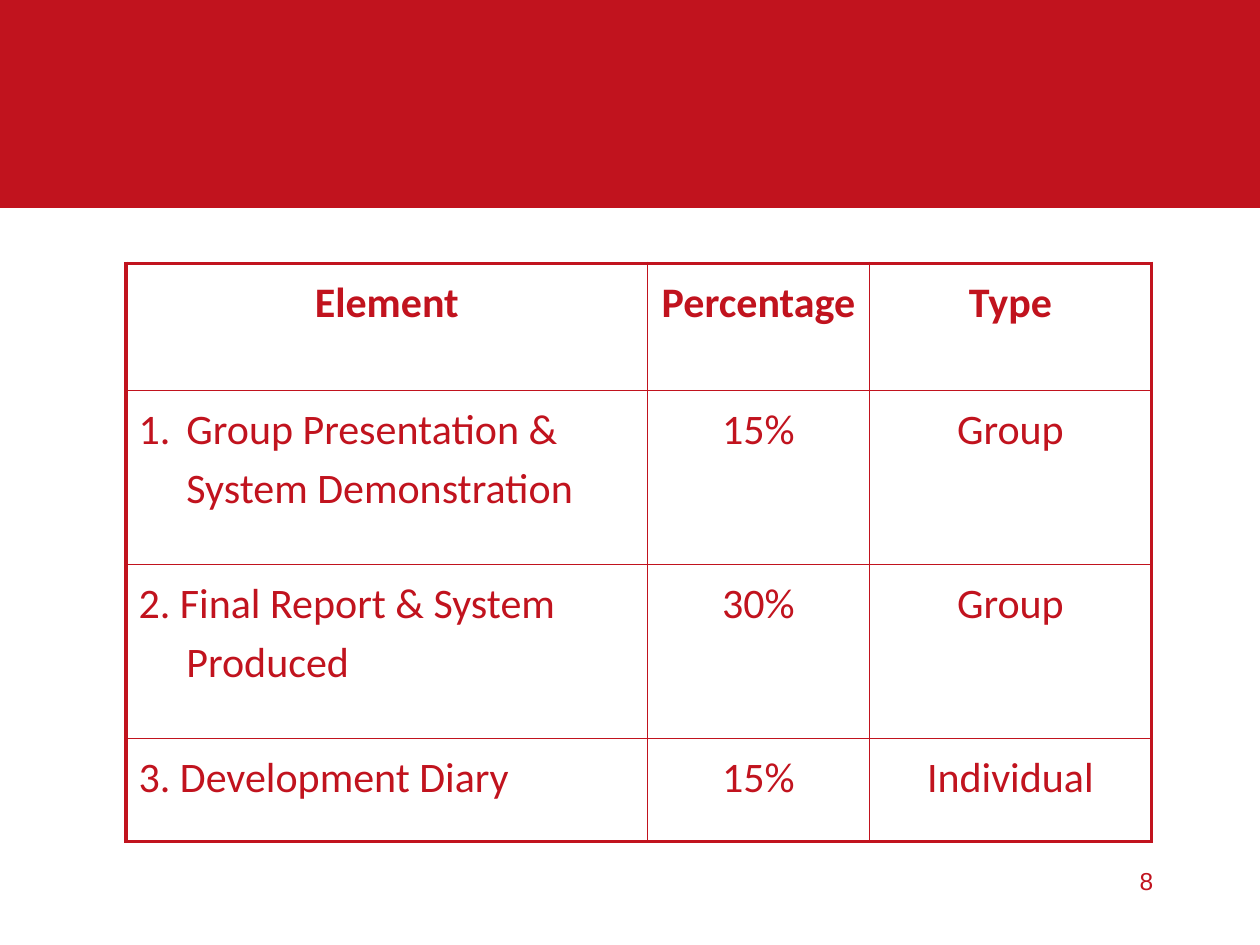
from lxml import etree
from pptx import Presentation
from pptx.dml.color import RGBColor
from pptx.enum import shapes, text
from pptx.oxml.ns import qn
from pptx.util import Emu, Inches, Pt

RED = "C1131E"
ALIGN = {"l": text.PP_ALIGN.LEFT, "c": text.PP_ALIGN.CENTER, "r": text.PP_ALIGN.RIGHT}


def paint(code):
    return RGBColor.from_string(code)


def write(frame, words, size=24, font="Calibri", color=RED, bold=False,
          align="l", line=None, after=None, hang=0, number=False):
    frame.word_wrap = True
    par = frame.paragraphs[0]
    props = par._p.get_or_add_pPr()
    if hang:
        props.set("marL", str(Inches(hang)))
        props.set("indent", str(-Inches(hang)))
    if number:
        etree.SubElement(props, qn("a:buFont"), typeface="+mj-lt")
        etree.SubElement(props, qn("a:buAutoNum"), type="arabicPeriod")
    par.alignment = ALIGN[align]
    if line:
        par.line_spacing = line
    if after is not None:
        par.space_after = Pt(after)
    run = par.add_run()
    run.text = words
    run.font.size, run.font.name, run.font.bold = Pt(size), font, bold
    run.font.color.rgb = paint(color)


class Deck:
    def __init__(self, wide, high, color):
        self.file = Presentation()
        self.file.slide_width, self.file.slide_height = Inches(wide), Inches(high)
        self.slide = self.file.slides.add_slide(self.file.slide_layouts[6])
        self.color = color

    def span(self, left, top, wide, high):
        w, h = self.file.slide_width, self.file.slide_height
        return [Emu(round(v)) for v in (left * w, top * h, wide * w, high * h)]

    def band(self, *share):
        box = self.slide.shapes.add_shape(shapes.MSO_SHAPE.RECTANGLE, *self.span(*share))
        box.shadow.inherit = False
        box.fill.solid()
        box.fill.fore_color.rgb = paint(self.color)
        box.line.fill.background()

    def label(self, words, *share, **style):
        box = self.slide.shapes.add_textbox(*self.span(*share))
        write(box.text_frame, words, color=self.color, **style)

    def edge(self, cell, sides):
        props = cell._tc.get_or_add_tcPr()
        for spot, (side, width) in enumerate(sides.items()):
            line = etree.Element(qn(f"a:ln{side}"), w=str(Pt(width)))
            fill = etree.SubElement(line, qn("a:solidFill"))
            etree.SubElement(fill, qn("a:srgbClr"), val=self.color)
            props.insert(spot, line)

    def table(self, rows, wides, highs, *share):
        grid = self.slide.shapes.add_table(len(rows), len(wides), *self.span(*share)).table
        grid.first_row = grid.horz_banding = False
        for col, wide in zip(grid.columns, wides):
            col.width = Inches(wide)
        for row, high in zip(grid.rows, highs):
            row.height = Inches(high)
        last, end = len(rows) - 1, len(wides) - 1
        for r, row in enumerate(rows):
            for c, words in enumerate(row):
                cell = grid.cell(r, c)
                cell.fill.background()
                item = r > 0 and c == 0
                write(cell.text_frame, words, color=self.color, bold=r == 0,
                      align="l" if item else "c", line=1.15, after=10,
                      hang=0.38 if item else 0, number=item and r == 1)
                outer = {"L": c == 0, "R": c == end, "T": r == 0, "B": r == last}
                self.edge(cell, {s: 2.25 if out else 1 for s, out in outer.items()})


def main():
    deck = Deck(10, 7.5, RED)
    deck.band(0, 0, 1, 0.22)
    rows = [
        ("Element", "Percentage", "Type"),
        ("Group Presentation & System Demonstration", "15%", "Group"),
        ("2. Final Report & System Produced", "30%", "Group"),
        ("3. Development Diary", "15%", "Individual"),
    ]
    deck.table(rows, (4.14, 1.76, 2.24), (1.01, 1.38, 1.38, 0.82),
               0.1, 2.09 / 7.5, 0.81, 4.59 / 7.5)
    deck.label("8", 0.717, 0.91, 0.208, 0.07, size=14, font="Arial", align="r")
    deck.file.save("out.pptx")


if __name__ == "__main__":
    main()
